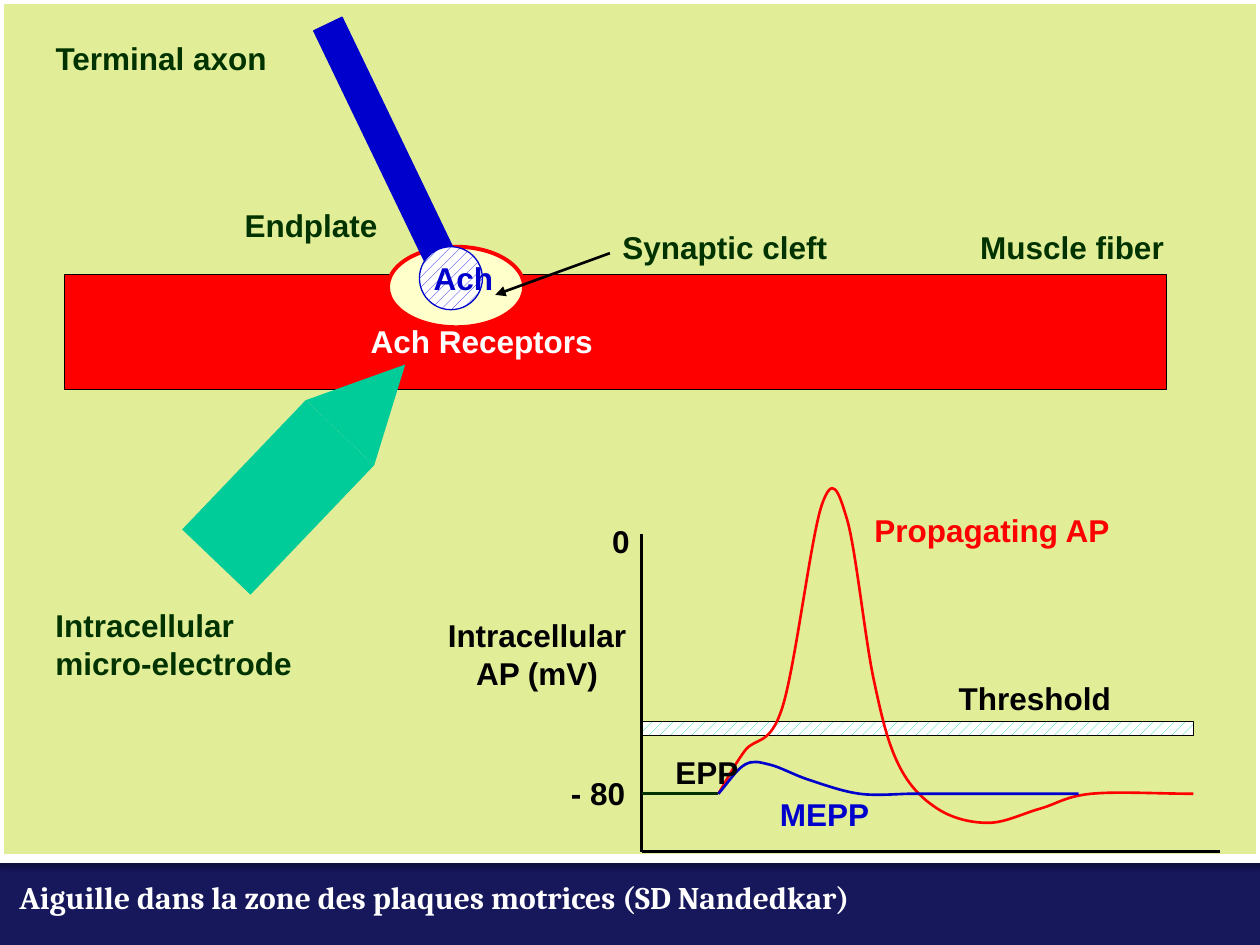
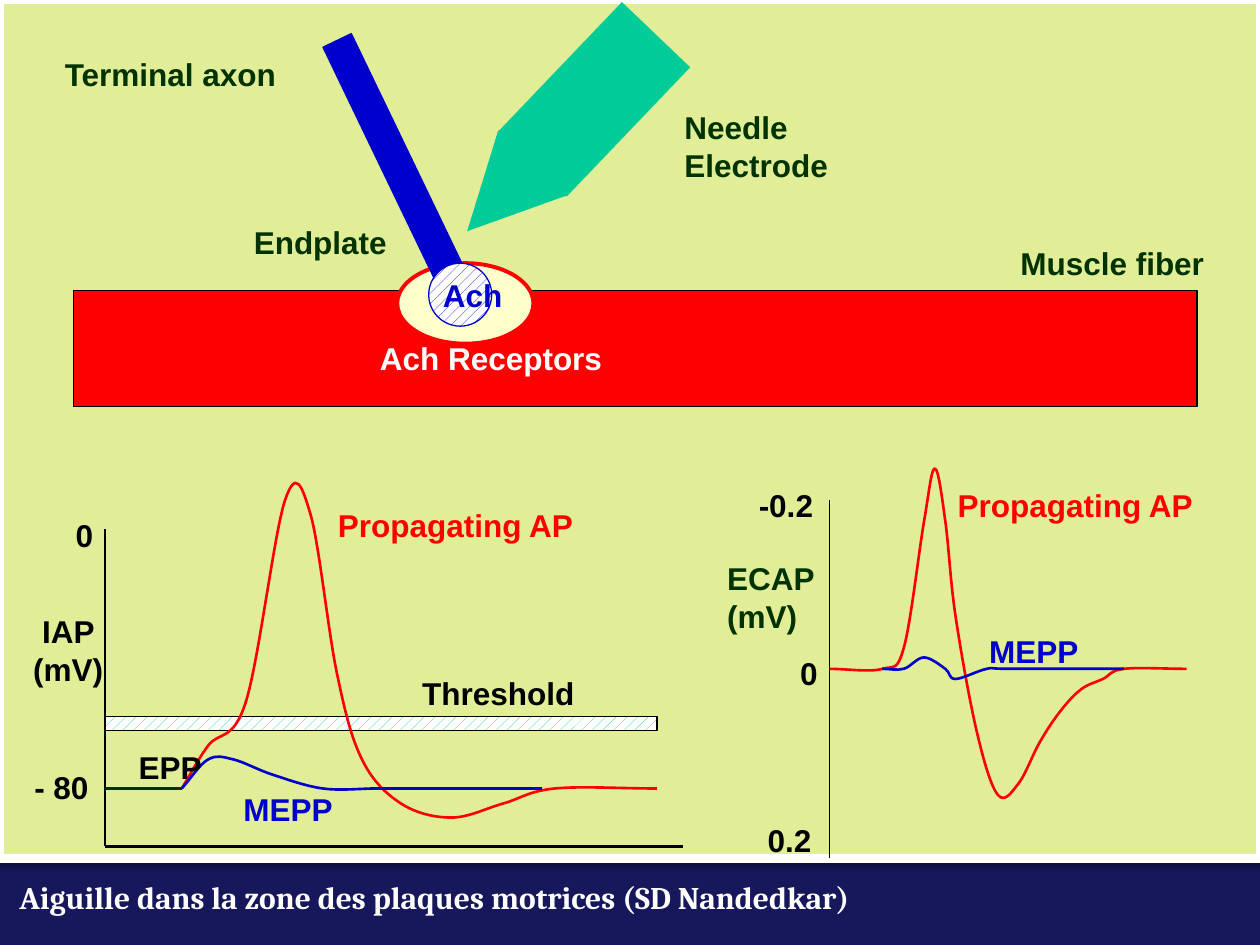
"""Builds two slides on endplate recordings: intracellular electrode and needle electrode."""
from lxml import etree
from pptx import Presentation
from pptx.dml.color import RGBColor
from pptx.enum.dml import MSO_PATTERN
from pptx.enum.shapes import MSO_CONNECTOR, MSO_SHAPE
from pptx.enum.text import MSO_AUTO_SIZE, PP_ALIGN
from pptx.oxml.ns import qn
from pptx.util import Pt

NAVY, LIME, WHITE, BLACK = "17175C", "E2ED98", "FFFFFF", "000000"
GREEN, RED, BLUE, TEAL, CREAM = "003300", "FF0000", "0000CC", "00CC99", "FFFFCC"
TILT = 43.7

CAPTION = "Aiguille dans la zone des plaques motrices (SD Nandedkar)"

# Labels are (text, x, y, width, colour), measured from the anchor of their part.
SYNAPSE_LABELS = [
    ("Terminal axon", -12, -138.2, 138, GREEN),
    ("Endplate", 96, -42.5, 102, GREEN),
    ("Ach", 204, -12.2, 54, BLUE),
    ("Ach Receptors", 168, 23.8, 165, WHITE),
]
INTRACELLULAR = {
    "lines": [
        ((0, -148.3), (0, 33.1), BLACK, 1.5),
        ((0, 33.1), (330.5, 33.1), BLACK, 1.5),
        ((0, 0), (43.9, 0), GREEN, 1.5),
    ],
    "curves": [
        (RED, [(43.9, 0), (59, -24.5), (80.6, -49.7), (103, -164.9),
               (117.4, -157), (132.5, -66.2), (146.9, -16.6), (169.2, 8.6),
               (198, 16.6), (227.5, 8.6), (257, 0), (315.4, 0)]),
        (BLUE, [(43.9, 0), (59, -16.6), (73.4, -16.6), (95.8, -7.9),
                (124.6, 0), (154.1, 0), (169.2, 0), (227.5, 0), (249.8, 0)]),
    ],
    "labels": [
        ("- 80", -47.5, -15.1, 54, BLACK),
        ("0", -23.8, -159.1, 36, BLACK),
        ("Propagating AP", 126, -164.9, 156, RED),
        ("MEPP", 72, -2.9, 66, BLUE),
        ("Threshold", 174.2, -69.1, 138, BLACK),
        ("EPP", 12.2, -26.6, 54, BLACK),
    ],
}
EXTRACELLULAR = {
    "lines": [((0, -96.5), (0, 108), BLACK, 0.75)],
    "curves": [
        (RED, [(0, 0), (30.2, 0), (42.5, -12.2), (54, -84.2), (60.2, -114.5),
               (66.2, -84.2), (72, -30.2), (84.2, 36), (96.2, 72), (108, 65.5),
               (120.2, 41.8), (132.2, 23.8), (144, 11.5), (156.2, 5.8),
               (168.2, 0), (204, 0)]),
        (BLUE, [(30.2, 0), (42.5, 0), (54, -6.5), (66.2, 0), (72, 5.8),
                (90, 0), (102.2, 0), (168.2, 0)]),
    ],
    "labels": [
        ("ECAP(mV)", -65.5, -66.2, 66, GREEN),
        ("0", -23.8, -12.2, 24, BLACK),
        ("-0.2", -47.5, -108, 60, BLACK),
        (" 0.2", -47.5, 83.5, 60, BLACK),
        ("MEPP", 84.2, -24.5, 66, BLUE),
        ("Propagating AP", 66.2, -108, 162, RED),
    ],
}
SLIDES = [
    {
        "fiber": (36.7, 156.8, 630),
        "electrode": {"body": (131.9, 233.2), "tip": (185.9, 200.8), "turn": TILT},
        "labels": [
            ("Muscle fiber", 553, 126.7, 126, GREEN),
            ("Intracellular micro-electrode", 24.6, 342.7, 156, GREEN),
            ("Synaptic cleft", 348.6, 126.7, 150, GREEN),
        ],
        "cleft_arrow": ((348.5, 144.7), (283, 168.5)),
        "plots": [(INTRACELLULAR, 366.6, 453.6)],
        "axis_title": ("Intracellular AP (mV)", 246.8, 348.5, 120.2, BLACK),
        "threshold": (366.6, 412.5),
    },
    {
        "fiber": (42, 166.2, 642),
        "electrode": {"body": (312.6, 5.7), "tip": (258.6, 85.6), "turn": TILT + 180},
        "labels": [
            ("Muscle fiber", 576, 136.1, 126, GREEN),
            ("Needle Electrode", 384, 58.2, 113.8, GREEN),
        ],
        "cleft_arrow": None,
        "plots": [(INTRACELLULAR, 60, 450.6), (EXTRACELLULAR, 474, 382.2)],
        "axis_title": ("IAP (mV)", 0, 346.2, 77.8, BLACK),
        "threshold": (60, 409.5),
    },
]


def colour(hex_code):
    return RGBColor.from_string(hex_code)


def add_text(slide, text, x, y, width, ink, font="Arial", align=PP_ALIGN.LEFT):
    frame = slide.shapes.add_textbox(Pt(x), Pt(y), Pt(width), Pt(28.8)).text_frame
    frame.word_wrap = True
    frame.auto_size = MSO_AUTO_SIZE.SHAPE_TO_FIT_TEXT
    paragraph = frame.paragraphs[0]
    paragraph.alignment = align
    run = paragraph.add_run()
    run.text = text
    run.font.name, run.font.size, run.font.bold = font, Pt(18), True
    run.font.color.rgb = colour(ink)


def add_labels(slide, labels, x=0, y=0):
    for text, dx, dy, width, ink in labels:
        add_text(slide, text, x + dx, y + dy, width, ink)


def add_block(slide, kind, x, y, width, height, fill, line=None, weight=0.75, turn=0, dots=None):
    block = slide.shapes.add_shape(kind, Pt(x), Pt(y), Pt(width), Pt(height))
    block.shadow.inherit = False
    block.rotation = turn
    if dots:
        block.fill.patterned()
        block.fill.pattern = MSO_PATTERN.PERCENT_20
        block.fill.fore_color.rgb = colour(dots)
        block.fill.back_color.rgb = colour(fill)
    else:
        block.fill.solid()
        block.fill.fore_color.rgb = colour(fill)
    if line:
        block.line.color.rgb = colour(line)
        block.line.width = Pt(weight)
    else:
        block.line.fill.background()
    return block


def add_line(slide, start, end, ink, weight, arrow=False):
    line = slide.shapes.add_connector(MSO_CONNECTOR.STRAIGHT, *map(Pt, start + end))
    line.line.color.rgb = colour(ink)
    line.line.width = Pt(weight)
    if arrow:
        etree.SubElement(line.line._get_or_add_ln(), qn("a:tailEnd"), type="triangle")
    etree.SubElement(line._element.spPr, qn("a:effectLst"))


def bezier_points(knots):
    ends = [tuple(2 * a - b for a, b in zip(knots[i], knots[j])) for i, j in ((0, 1), (-1, -2))]
    padded = [ends[0], *knots, ends[1]]
    points = [knots[0]]
    for before, start, end, after in zip(padded, padded[1:], padded[2:], padded[3:]):
        points.append(tuple(s + (e - b) / 6 for b, s, e in zip(before, start, end)))
        points.append(tuple(e - (a - s) / 6 for s, e, a in zip(start, end, after)))
        points.append(end)
    return points


def add_curve(slide, knots, x, y, ink):
    points = [(Pt(x + dx), Pt(y + dy)) for dx, dy in bezier_points(knots)]
    builder = slide.shapes.build_freeform(*points[0])
    builder.add_line_segments(points[1:], close=False)
    curve = builder.convert_to_shape()
    outline = next(curve._element.iter(qn("a:path")))
    steps = outline.findall(qn("a:lnTo"))
    for first in range(0, len(steps), 3):
        bend = etree.SubElement(outline, qn("a:cubicBezTo"))
        for step in steps[first:first + 3]:
            bend.append(step[0])
            outline.remove(step)
    curve.shadow.inherit = False
    curve.fill.background()
    curve.line.color.rgb = colour(ink)
    curve.line.width = Pt(1.5)


def add_frame(slide):
    slide.background.fill.solid()
    slide.background.fill.fore_color.rgb = colour(NAVY)
    panel = add_block(slide, MSO_SHAPE.RECTANGLE, 0, 0, 720, 490.5, LIME, WHITE, 5)
    effects = panel._element.spPr.find(qn("a:effectLst"))
    shadow = etree.SubElement(effects, qn("a:outerShdw"), blurRad=str(Pt(3.1)),
                              dist=str(Pt(1.8)), dir="5400000", rotWithShape="0")
    shade = etree.SubElement(shadow, qn("a:srgbClr"), val=BLACK)
    etree.SubElement(shade, qn("a:alpha"), val="35000")
    add_text(slide, CAPTION, 4, 498.2, 664, WHITE, font="Cambria")


def add_synapse(slide, x, y, fiber_width):
    add_block(slide, MSO_SHAPE.RECTANGLE, x, y, fiber_width, 66, RED, BLACK)
    add_block(slide, MSO_SHAPE.OVAL, x + 185, y - 15.8, 77.8, 46, CREAM, RED, 2.25)
    add_block(slide, MSO_SHAPE.RECTANGLE, x + 174.2, y - 150.5, 18, 150, BLUE, BLUE, turn=334.3)
    add_block(slide, MSO_SHAPE.OVAL, x + 203, y - 15.8, 36, 36, WHITE, BLUE, dots=BLUE)
    add_labels(slide, SYNAPSE_LABELS, x, y)


def add_electrode(slide, body, tip, turn):
    add_block(slide, MSO_SHAPE.RECTANGLE, *body, 54, 102.2, TEAL, turn=TILT)
    add_block(slide, MSO_SHAPE.ISOSCELES_TRIANGLE, *tip, 54, 54, TEAL, turn=turn)


def add_plot(slide, plot, x, y):
    for (x1, y1), (x2, y2), ink, weight in plot["lines"]:
        add_line(slide, (x + x1, y + y1), (x + x2, y + y2), ink, weight)
    for ink, knots in plot["curves"]:
        add_curve(slide, knots, x, y, ink)
    add_labels(slide, plot["labels"], x, y)


def main():
    deck = Presentation()
    deck.slide_width, deck.slide_height = Pt(720), Pt(540)
    for content in SLIDES:
        slide = deck.slides.add_slide(deck.slide_layouts[6])
        add_frame(slide)
        add_synapse(slide, *content["fiber"])
        add_electrode(slide, **content["electrode"])
        add_labels(slide, content["labels"])
        if content["cleft_arrow"]:
            add_line(slide, *content["cleft_arrow"], BLACK, 1.5, arrow=True)
        add_block(slide, MSO_SHAPE.RECTANGLE, *content["threshold"], 315.4, 8, WHITE, BLACK, dots=TEAL)
        for plot in content["plots"]:
            add_plot(slide, *plot)
        add_text(slide, *content["axis_title"], align=PP_ALIGN.CENTER)
    deck.save("out.pptx")


if __name__ == "__main__":
    main()
